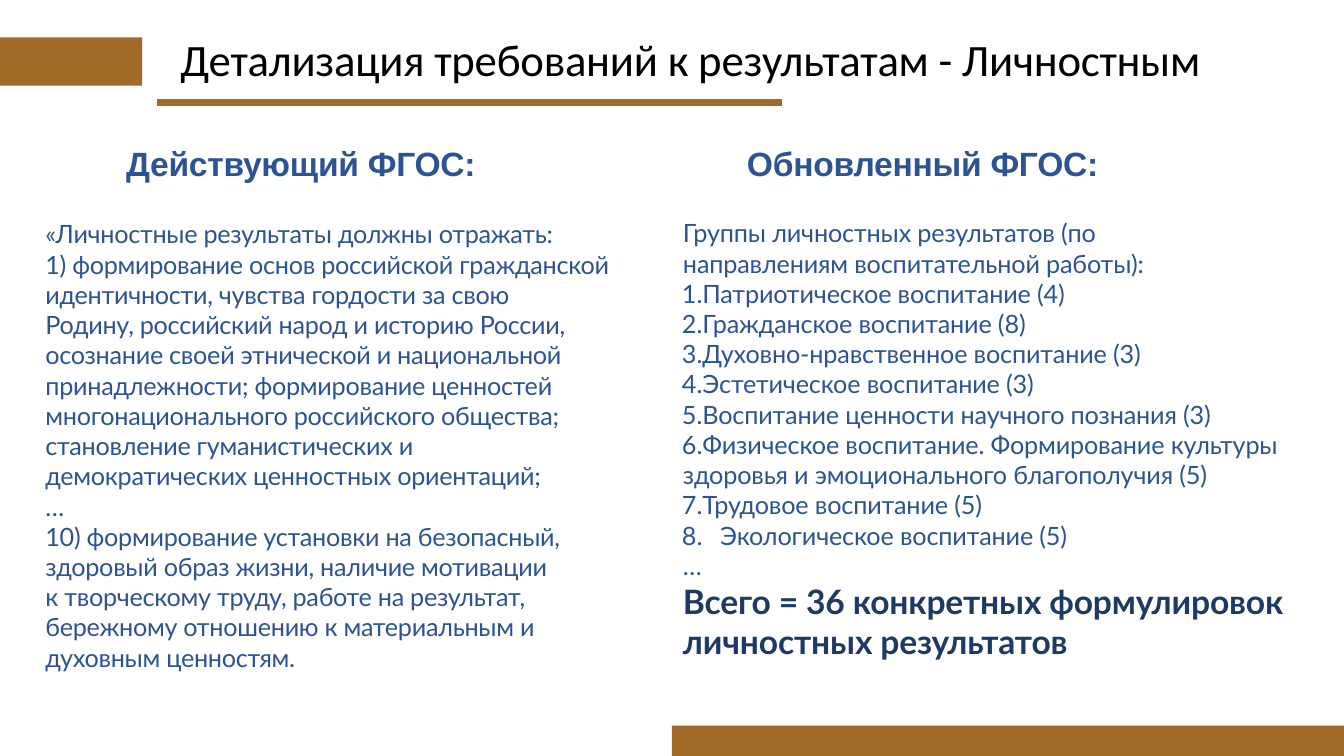
from lxml.etree import SubElement
from pptx import Presentation
from pptx.dml.color import RGBColor
from pptx.enum.shapes import MSO_CONNECTOR, MSO_SHAPE
from pptx.enum.text import MSO_ANCHOR
from pptx.oxml.ns import qn
from pptx.util import Inches, Pt

THEME = {
    "brown": RGBColor.from_string("A06A29"),
    "title": ("Calibri", 32, RGBColor.from_string("000000"), False),
    "head": ("Arial", 24, RGBColor.from_string("2D5395"), True),
    "body": ("Lato", 18, RGBColor.from_string("2D5395"), False),
    "total": ("Lato", 24, RGBColor.from_string("1F3967"), True),
}

deck = Presentation()
deck.slide_width, deck.slide_height = Inches(13.33), Inches(7.5)
slide = deck.slides.add_slide(deck.slide_layouts[6])

# The slide is a grid of 100 columns by 100 rows.
COL, ROW = deck.slide_width / 100, deck.slide_height / 100
EDGE = 0.08  # paragraph margin, columns
HANG = 2.85  # room for a number, columns


def set_font(run, style):
    font = run.font
    font.name, size, font.color.rgb, font.bold = THEME[style]
    font.size = Pt(size)


def add_box(left, top, wide, high, lines, style, pad=0, track=0):
    """Add a text box with one paragraph per line; track is letter spacing in points."""
    box = slide.shapes.add_textbox(
        int(left * COL), int(top * ROW), int(wide * COL), int(high * ROW))
    frame = box.text_frame
    frame.word_wrap = True
    frame.margin_left = frame.margin_right = Inches(pad)
    frame.margin_top, frame.margin_bottom = Inches(pad / 2 or 0.01), Inches(pad / 2)
    frame.text = "\n".join(lines)
    for para in frame.paragraphs:
        para._p.get_or_add_pPr().set("marL", str(int(EDGE * COL)))
        for run in para.runs:
            set_font(run, style)
            run.font._element.set("spc", str(round(track * 100)))
    return frame


# Brown bars and the rule under the title
for left, top, wide, high in [(0, 4.93, 10.58, 6.4), (50, 96, 50, 4)]:
    bar = slide.shapes.add_shape(
        MSO_SHAPE.RECTANGLE,
        int(left * COL), int(top * ROW), int(wide * COL), int(high * ROW))
    bar.shadow.inherit = False
    bar.fill.solid()
    bar.fill.fore_color.rgb = THEME["brown"]
    bar.line.fill.background()

rule = slide.shapes.add_connector(
    MSO_CONNECTOR.STRAIGHT,
    int(11.7 * COL), int(13.6 * ROW), int(58.2 * COL), int(13.6 * ROW))
rule.line.color.rgb = THEME["brown"]
rule.line.width = Pt(5)
SubElement(rule._element.spPr, qn("a:effectLst"))

# Title and column heads
title = add_box(13.35, 4, 82.1, 7.33,
                ["Детализация требований к результатам - Личностным"],
                "title", track=-0.2)
title.vertical_anchor = MSO_ANCHOR.MIDDLE

for left, head in [(9.3, "Действующий ФГОС:"), (55.5, "Обновленный ФГОС:")]:
    add_box(left, 18.8, 30, 5.73, [head], "head", track=-0.2)

# Current standard
add_box(3.3, 28.8, 42.3, 64.8, [
    "«Личностные результаты должны отражать:",
    "1) формирование основ российской гражданской идентичности, чувства гордости "
    "за свою\vРодину, российский народ и историю России, осознание своей "
    "этнической и национальной принадлежности; формирование ценностей "
    "многонационального российского общества; становление гуманистических и\v"
    "демократических ценностных ориентаций;",
    "…",
    "10) формирование установки на безопасный, здоровый образ жизни, наличие "
    "мотивации\vк творческому труду, работе на результат, бережному отношению "
    "к материальным и духовным ценностям.",
], "body", track=-0.2)

# Updated standard
intro = ["Группы личностных результатов (по", "направлениям воспитательной работы):"]
groups = [
    "Патриотическое воспитание (4)",
    "Гражданское воспитание (8)",
    "Духовно-нравственное воспитание (3)",
    "Эстетическое воспитание (3)",
    "Воспитание ценности научного познания (3)",
    "Физическое воспитание. Формирование культуры здоровья и эмоционального "
    "благополучия (5)",
    "Трудовое воспитание (5)",
    "Экологическое воспитание (5)",
]
total = ["Всего = 36 конкретных формулировок", "личностных результатов"]
right = add_box(50, 28.13, 46.65, 64.67, intro + groups + ["…"] + total,
                "body", pad=0.1, track=-0.1)

items = right.paragraphs[len(intro):len(intro) + len(groups)]
for item in items:
    props = item._p.get_or_add_pPr()
    props.set("indent", str(int(-HANG * COL)))
    SubElement(props, qn("a:buAutoNum"), type="arabicPeriod")
    stops = SubElement(props, qn("a:tabLst"))
    for tab in (2.25, 3.75):
        SubElement(stops, qn("a:tab"), pos=str(int(tab * COL)), algn="l")
items[-1]._p.get_or_add_pPr().set("marL", str(int(HANG * COL)))
for para in right.paragraphs[-len(total):]:
    set_font(para.runs[0], "total")

deck.save("out.pptx")
